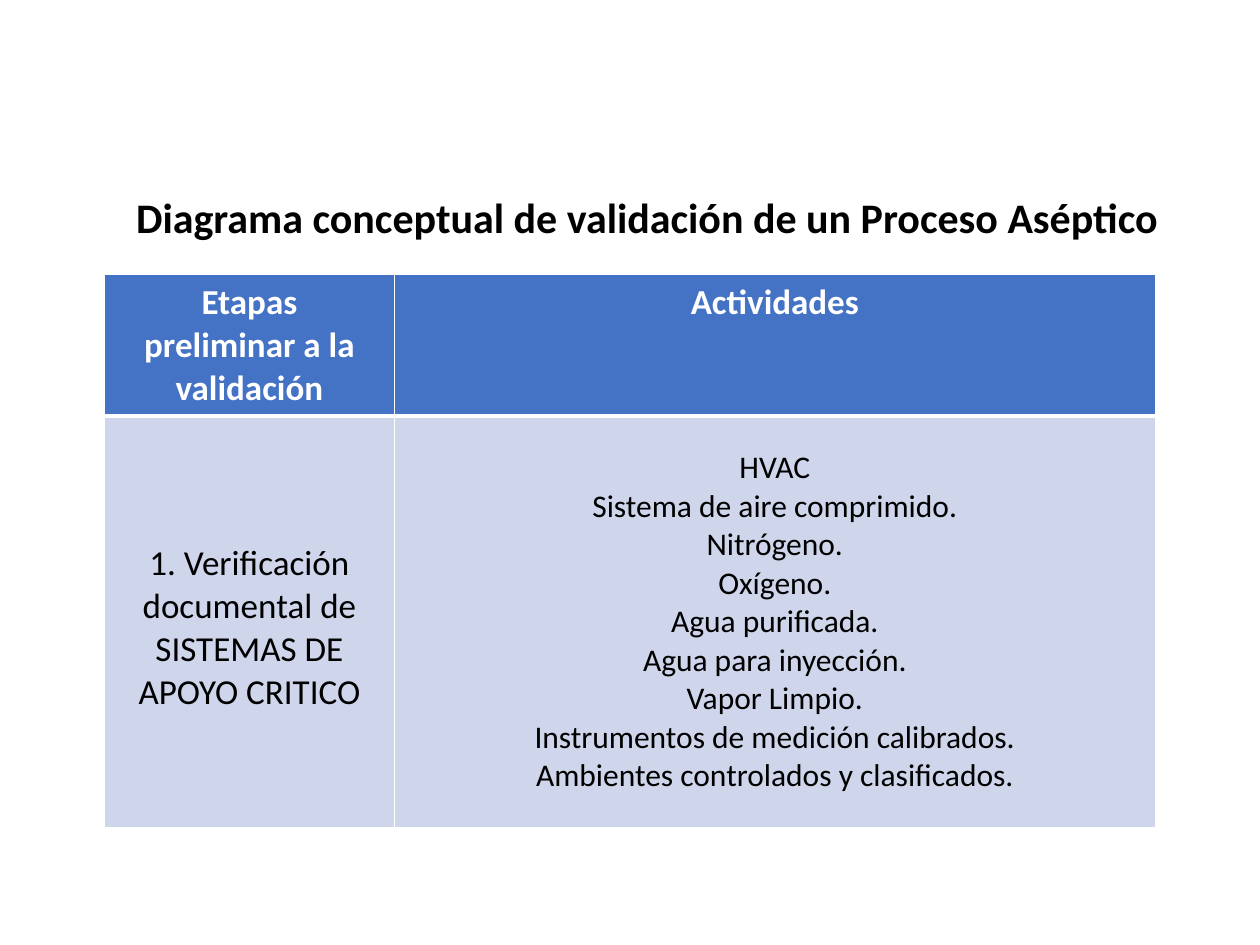
from lxml.etree import SubElement
from pptx import Presentation
from pptx.dml.color import RGBColor
from pptx.enum.text import MSO_ANCHOR as Anchor, MSO_AUTO_SIZE as AutoSize, PP_ALIGN as Align
from pptx.oxml.ns import qn
from pptx.util import Inches, Pt

BLACK = RGBColor(0x00, 0x00, 0x00)
WHITE = RGBColor(0xFF, 0xFF, 0xFF)
BLUE = RGBColor(0x44, 0x72, 0xC4)
PALE_BLUE = RGBColor(0xCF, 0xD5, 0xEA)
FONT = "Calibri"

TITLE = "Diagrama conceptual de validación de un Proceso Aséptico"
STAGE_HEADING = ["Etapas", "preliminar a la validación"]
ACTIVITY_HEADING = ["Actividades"]
STAGE = ["1. Verificación documental de SISTEMAS DE APOYO CRITICO"]
ACTIVITIES = [
    "HVAC",
    "Sistema de aire comprimido.",
    "Nitrógeno.",
    "Oxígeno.",
    "Agua purificada.",
    "Agua para inyección.",
    "Vapor Limpio.",
    "Instrumentos de medición calibrados.",
    "Ambientes controlados y clasificados.",
]
COLUMN_WIDTHS = [2.3, 6.04]
ROW_HEIGHTS = [1.09, 3.27]


def write_lines(frame, lines, size, color, bold, align):
    frame.text = "\n".join(lines)
    for para in frame.paragraphs:
        para.alignment = align
        font = para.font
        font.name, font.size, font.bold = FONT, Pt(size), bold
        font.color.rgb = color


def set_borders(cell, top, bottom):
    """Draw white borders: 1 pt at the sides, the given points above and below."""
    properties = cell._tc.get_or_add_tcPr()
    for side, width in (("L", 1), ("R", 1), ("T", top), ("B", bottom)):
        line = SubElement(properties, qn(f"a:ln{side}"), w=str(Pt(width)))
        fill = SubElement(line, qn("a:solidFill"))
        SubElement(fill, qn("a:srgbClr"), val=str(WHITE))


def fill_cell(cell, lines, size, header):
    set_borders(cell, *((1, 3) if header else (3, 1)))
    cell.fill.solid()
    cell.fill.fore_color.rgb = BLUE if header else PALE_BLUE
    cell.vertical_anchor = Anchor.TOP if header else Anchor.MIDDLE
    write_lines(cell.text_frame, lines, size, WHITE if header else BLACK, header, Align.CENTER)


def add_title(slide):
    title = slide.shapes.title
    title.left, title.top = Inches(0.98), Inches(1.47)
    title.width, title.height = Inches(8.55), Inches(0.5)
    frame = title.text_frame
    write_lines(frame, [TITLE], 24, BLACK, True, Align.LEFT)
    frame.vertical_anchor = Anchor.TOP
    frame.auto_size = AutoSize.NONE
    frame.word_wrap = True


def add_stage_table(slide):
    table = slide.shapes.add_table(
        2, 2, Inches(0.83), Inches(2.18),
        Inches(sum(COLUMN_WIDTHS)), Inches(sum(ROW_HEIGHTS)),
    ).table
    for column, width in zip(table.columns, COLUMN_WIDTHS):
        column.width = Inches(width)
    for row, height in zip(table.rows, ROW_HEIGHTS):
        row.height = Inches(height)
    fill_cell(table.cell(0, 0), STAGE_HEADING, 20, header=True)
    fill_cell(table.cell(0, 1), ACTIVITY_HEADING, 20, header=True)
    fill_cell(table.cell(1, 0), STAGE, 20, header=False)
    fill_cell(table.cell(1, 1), ACTIVITIES, 18, header=False)
    table.cell(1, 0).margin_top = Inches(0.15)


def main():
    deck = Presentation()
    deck.slide_width, deck.slide_height = Inches(10), Inches(7.5)
    slide = deck.slides.add_slide(deck.slide_layouts.get_by_name("Title Only"))
    add_title(slide)
    add_stage_table(slide)
    deck.save("out.pptx")


if __name__ == "__main__":
    main()
